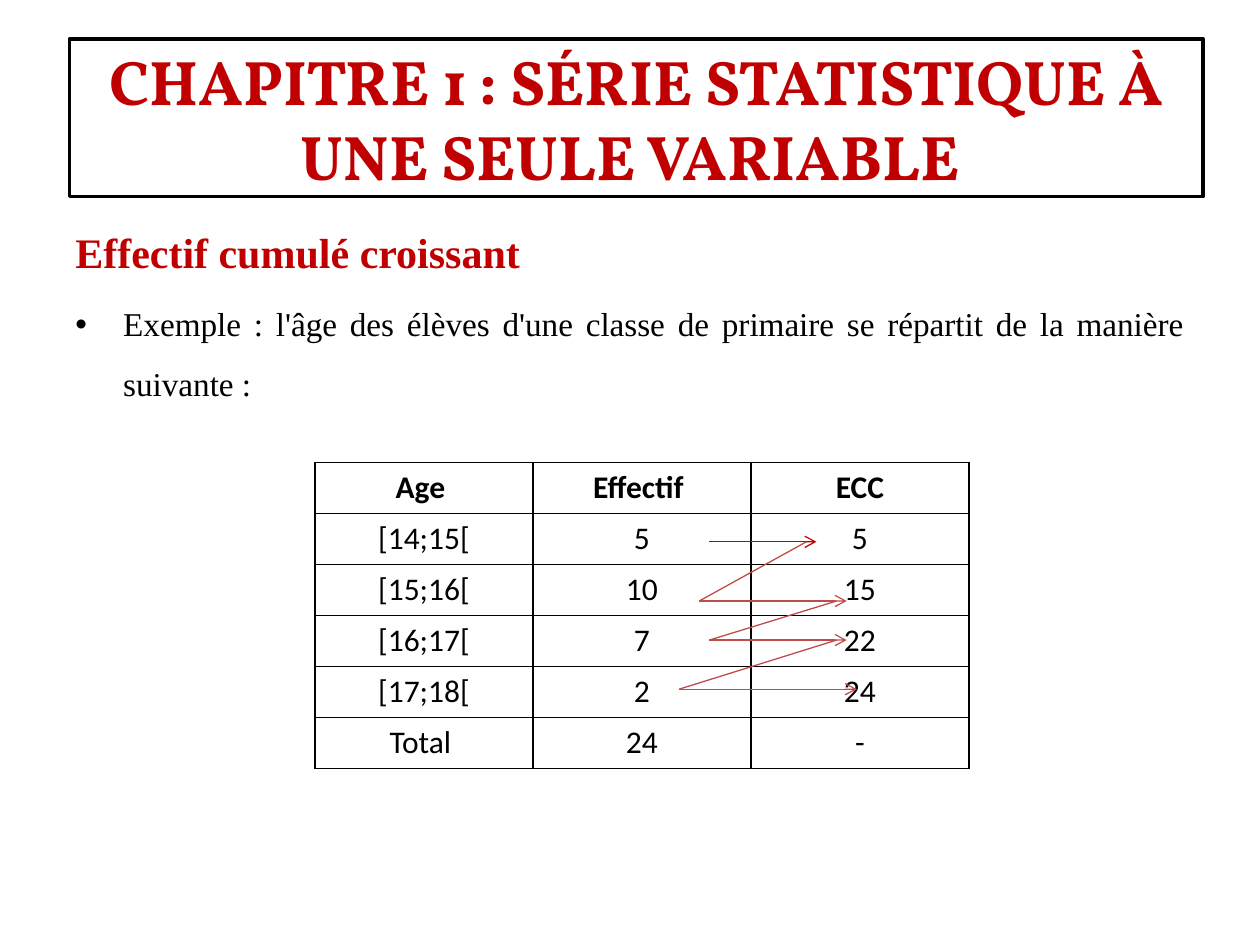
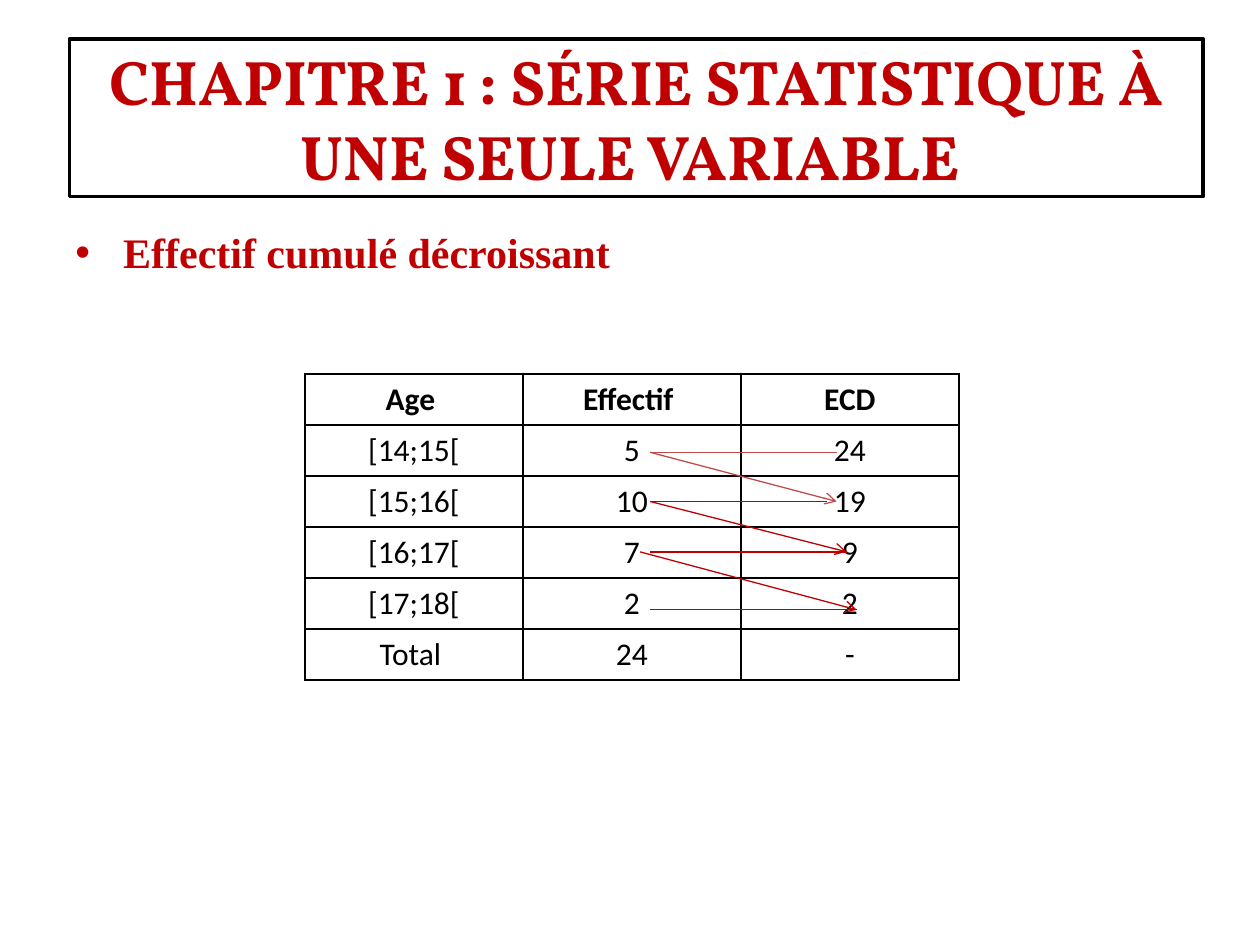
from lxml.etree import SubElement
from pptx import Presentation
from pptx.dml.color import RGBColor
from pptx.enum.shapes import MSO_CONNECTOR
from pptx.enum.text import MSO_ANCHOR, MSO_AUTO_SIZE, PP_ALIGN
from pptx.oxml.ns import qn
from pptx.util import Inches, Pt

COLORS = {"red": "C00000", "soft_red": "BF4C48", "black": "000000", "white": "FFFFFF"}
TITLE = "CHAPITRE 1 : SÉRIE STATISTIQUE À UNE SEULE VARIABLE "
TITLE_FONT = dict(name="Vollkorn", size=Pt(36), bold=True)
HEADING_FONT = dict(name="Times New Roman", size=Pt(24), bold=True)
BODY_FONT = dict(name="Times New Roman", size=Pt(19), bold=False)
AGES = ["[14;15[", "[15;16[", "[16;17[", "[17;18[", "Total "]
COUNTS = ["5", "10", "7", "2", "24"]
COL_W, ROW_H = 1.73, 0.405
INDENT = Inches(0.38)


def rgb(color):
    return RGBColor.from_string(COLORS[color])


def write(p, text, font, color):
    r = p.add_run()
    r.text = text
    for name, value in font.items():
        setattr(r.font, name, value)
    r.font.color.rgb = rgb(color)


def add_titled_slide(prs):
    s = prs.slides.add_slide(prs.slide_layouts[5])
    sp = s.shapes.title
    box = dict(left=0.55, top=0.31, width=9, height=1.25)
    for name, value in box.items():
        setattr(sp, name, Inches(value))
    sp.fill.solid()
    sp.fill.fore_color.rgb = rgb("white")
    sp.line.color.rgb = rgb("black")
    sp.line.width = Pt(2)
    tf = sp.text_frame
    frame = dict(auto_size=MSO_AUTO_SIZE.NONE, word_wrap=True,
                 vertical_anchor=MSO_ANCHOR.MIDDLE)
    for name, value in frame.items():
        setattr(tf, name, value)
    p = tf.paragraphs[0]
    p.alignment = PP_ALIGN.CENTER
    write(p, TITLE, TITLE_FONT, "red")
    return s


def add_body(s):
    sp = s.shapes.add_textbox(Inches(0.5), Inches(1.75), Inches(9), Inches(4.95))
    sp.text_frame.word_wrap = True
    return sp.text_frame


def format_body_line(p, text, font, color, bullet):
    """Write a hanging-indent paragraph, with or without a bullet."""
    p.space_before = int(font["size"] * 0.2)
    pPr = p._p.get_or_add_pPr()
    pPr.set("marL", str(INDENT))
    pPr.set("indent", str(-INDENT))
    if bullet:
        SubElement(pPr, qn("a:buFont"), typeface="Arial")
        SubElement(pPr, qn("a:buChar"), char="•")
    else:
        SubElement(pPr, qn("a:buNone"))
    write(p, text, font, color)


def add_cell_borders(cell):
    tcPr = cell._tc.get_or_add_tcPr()
    for i, side in enumerate(("lnL", "lnR", "lnT", "lnB")):
        ln = tcPr.makeelement(qn(f"a:{side}"), {"w": str(Pt(1))})
        fill = SubElement(ln, qn("a:solidFill"))
        SubElement(fill, qn("a:srgbClr"), val=COLORS["black"])
        tcPr.insert(i, ln)


def add_age_table(s, left, top, cumul_name, cumuls):
    rows = [("Age ", "Effectif ", cumul_name), *zip(AGES, COUNTS, cumuls + ["-"])]
    table = s.shapes.add_table(len(rows), 3, Inches(left), Inches(top),
                               Inches(3 * COL_W), Inches(len(rows) * ROW_H)).table
    table.first_row = table.horz_banding = False
    for i, row in enumerate(rows):
        for j, text in enumerate(row):
            cell = table.cell(i, j)
            cell.fill.background()
            add_cell_borders(cell)
            p = cell.text_frame.paragraphs[0]
            p.alignment = PP_ALIGN.CENTER
            write(p, text, dict(name="Calibri", size=Pt(18), bold=i == 0), "black")


def add_line(s, start, end, color, arrow=False):
    ends = [Inches(v) for v in (*start, *end)]
    cx = s.shapes.add_connector(MSO_CONNECTOR.STRAIGHT, *ends)
    cx.line.color.rgb = rgb(color)
    cx.line.width = Pt(0.75)
    if arrow:
        SubElement(cx.line._get_or_add_ln(), qn("a:tailEnd"), type="arrow")
    SubElement(cx._element.spPr, qn("a:effectLst"))


def add_rising_zigzag(s, rows):
    """Arrow across each row, then a plain line back to the next row."""
    for i, (y, left, tip) in enumerate(rows):
        add_line(s, (left, y), (tip, y), "soft_red" if i else "red", arrow=True)
        if i + 1 < len(rows):
            next_y, next_left, _ = rows[i + 1]
            add_line(s, (tip - 0.08, y), (next_left, next_y), "soft_red")


def add_falling_zigzag(s, rows, arrows):
    """Plain line across each row, then an arrow down to the next row."""
    for i, (y, right) in enumerate(rows):
        color = "red" if i else "soft_red"
        add_line(s, (right, y), (5.16, y), color)
        if i < len(arrows):
            left, tip = arrows[i]
            add_line(s, (left, y), (tip, rows[i + 1][0]), color, arrow=True)


def build_increasing(prs):
    s = add_titled_slide(prs)
    tf = add_body(s)
    format_body_line(tf.paragraphs[0], "Effectif cumulé croissant",
                     HEADING_FONT, "red", bullet=False)
    p = tf.add_paragraph()
    p.alignment = PP_ALIGN.JUSTIFY
    p.line_spacing = 1.5
    format_body_line(p, "Exemple : l'âge des élèves d'une classe de primaire "
                     "se répartit de la manière suivante :",
                     BODY_FONT, "black", bullet=True)
    add_age_table(s, 2.5, 3.67, "ECC", ["5", "15", "22", "24"])
    add_rising_zigzag(s, [(4.3, 5.63, 6.48), (4.77, 5.55, 6.72),
                          (5.08, 5.63, 6.72), (5.47, 5.39, 6.8)])


def build_decreasing(prs):
    s = add_titled_slide(prs)
    format_body_line(add_body(s).paragraphs[0], "Effectif cumulé décroissant",
                     HEADING_FONT, "red", bullet=True)
    add_age_table(s, 2.42, 2.97, "ECD", ["24", "19", "9", "2"])
    add_falling_zigzag(s, [(3.59, 6.64), (3.98, 6.56), (4.38, 6.72), (4.84, 6.8)],
                       [(5.16, 6.64), (5.16, 6.72), (5.08, 6.8)])


def main():
    prs = Presentation()
    prs.slide_width, prs.slide_height = Inches(10), Inches(7.5)
    build_increasing(prs)
    build_decreasing(prs)
    prs.save("out.pptx")


if __name__ == "__main__":
    main()
